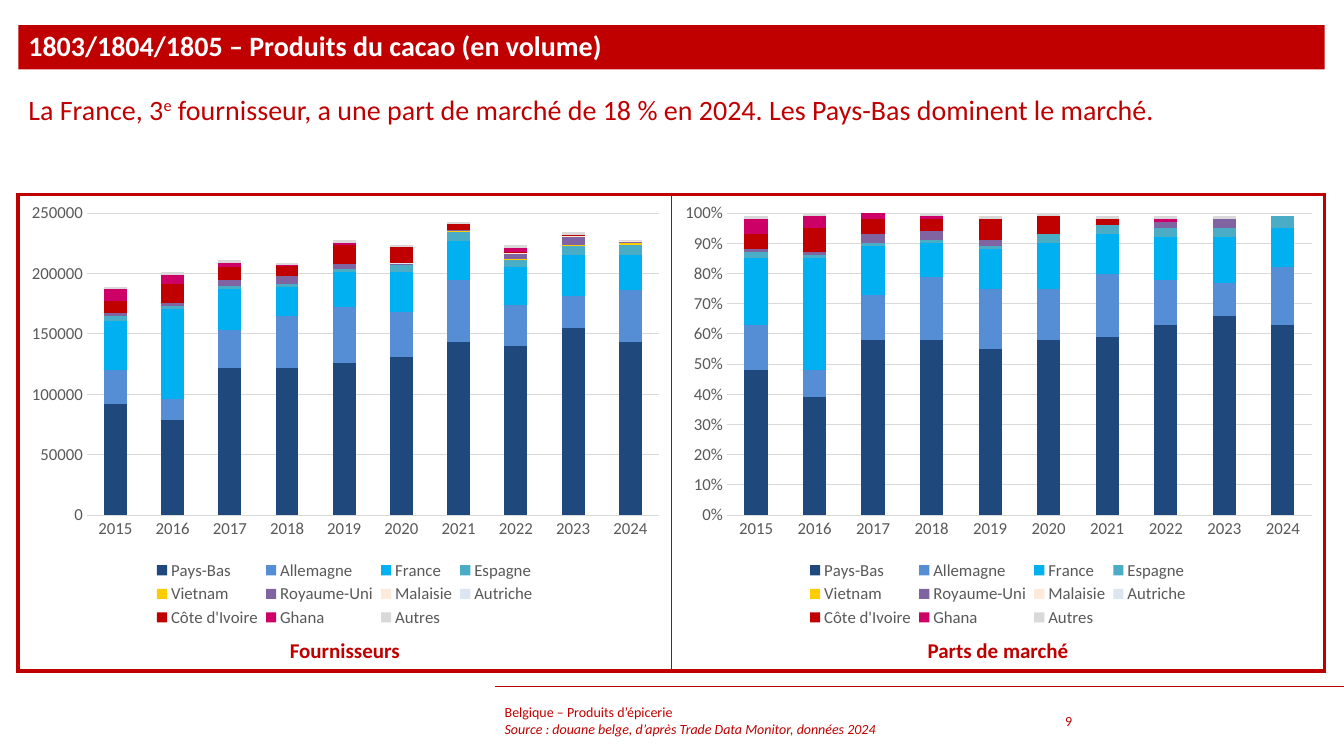
from dataclasses import dataclass

from lxml import etree
from pptx import Presentation
from pptx import util as u
from pptx.chart import data as chart_data
from pptx.dml import color
from pptx.enum import chart as ch, shapes, text
from pptx.oxml import parse_xml
from pptx.oxml.ns import nsdecls, qn


@dataclass(frozen=True)
class Theme:
    red: str = "C00000"
    white: str = "FFFFFF"
    grid: str = "D9D9D9"
    label: str = "595959"
    font: str = "Calibri"
    heading: int = 20
    caption: int = 15
    chart: int = 12
    footer: int = 10


THEME = Theme()
rgb = color.RGBColor.from_string


def add_run(paragraph, words, size, hue=THEME.red, bold=False, italic=False):
    run = paragraph.add_run()
    run.text = words
    font = run.font
    font.name, font.size, font.color.rgb = THEME.font, u.Pt(size), rgb(hue)
    font.bold, font.italic = bold, italic
    return run


def place_manually(part, before, x, y, w, h, inner=False):
    for old in part.findall(qn("c:layout")):
        part.remove(old)
    target = '<c:layoutTarget val="inner"/>' if inner else ""
    layout = parse_xml(
        f'<c:layout {nsdecls("c")}><c:manualLayout>{target}'
        '<c:xMode val="edge"/><c:yMode val="edge"/>'
        f'<c:x val="{x}"/><c:y val="{y}"/><c:w val="{w}"/><c:h val="{h}"/>'
        "</c:manualLayout></c:layout>")
    part.find(qn(before)).addprevious(layout)


deck = Presentation()
deck.slide_width, deck.slide_height = u.Cm(33.87), u.Cm(19.05)
slide = deck.slides.add_slide(deck.slide_layouts[1])

LEFT, TOP, HALF, FRAME_HEIGHT = 0.46, 4.9, 16.46, 12.01

heading = slide.shapes.title
message = slide.placeholders[1]
for holder, top, height, anchor in (
        (heading, 0.63, 1.12, text.MSO_ANCHOR.MIDDLE),
        (message, 2.29, 2.06, text.MSO_ANCHOR.TOP)):
    holder.left, holder.top = u.Cm(LEFT), u.Cm(top)
    holder.width, holder.height = u.Cm(2 * HALF), u.Cm(height)
    frame = holder.text_frame
    frame.word_wrap, frame.auto_size = True, text.MSO_AUTO_SIZE.NONE
    frame.vertical_anchor = anchor
    line = frame.paragraphs[0]
    properties = line._p.get_or_add_pPr()
    properties.set("marL", "0")
    properties.set("indent", "0")
    etree.SubElement(properties, qn("a:buNone"))
    line.alignment, line.line_spacing, line.space_before = text.PP_ALIGN.LEFT, 0.9, u.Pt(0)

heading.fill.solid()
heading.fill.fore_color.rgb = rgb(THEME.red)
add_run(heading.text_frame.paragraphs[0], "1803/1804/1805 – Produits du cacao (en volume)",
        THEME.heading, THEME.white, bold=True)

sentence = message.text_frame.paragraphs[0]
add_run(sentence, "La France, 3", THEME.heading)
ordinal = add_run(sentence, "e", THEME.heading)
ordinal._r.get_or_add_rPr().set("baseline", "30000")
add_run(sentence, " fournisseur, a une part de marché de 18 % en 2024. "
        "Les Pays-Bas dominent le marché.", THEME.heading)

panels = slide.shapes.add_table(1, 2, u.Cm(LEFT), u.Cm(TOP), u.Cm(2 * HALF), u.Cm(FRAME_HEIGHT)).table
panels.first_row = panels.horz_banding = False
for column, edges in enumerate(({"L": 3, "R": 1, "T": 3, "B": 3}, {"L": 1, "R": 3, "T": 3, "B": 3})):
    cell = panels.cell(0, column)
    for side, weight in edges.items():
        cell._tc.get_or_add_tcPr().append(parse_xml(
            f'<a:ln{side} {nsdecls("a")} w="{u.Pt(weight)}"><a:solidFill>'
            f'<a:srgbClr val="{THEME.red}"/></a:solidFill></a:ln{side}>'))
    cell.fill.background()

years = [str(year) for year in range(2015, 2025)]
suppliers = {
    "Pays-Bas": ("1F497D", (92000, 79000, 122000, 122000, 126000, 131000, 143000, 140000, 155000, 143000),
                 (0.48, 0.39, 0.58, 0.58, 0.55, 0.58, 0.59, 0.63, 0.66, 0.63)),
    "Allemagne": ("558ED5", (28000, 17000, 31000, 43000, 46000, 37000, 52000, 34000, 26000, 43000),
                  (0.15, 0.09, 0.15, 0.21, 0.2, 0.17, 0.21, 0.15, 0.11, 0.19)),
    "France": ("00B0F0", (41000, 75000, 34000, 24000, 29000, 33000, 32000, 31000, 34000, 29000),
               (0.22, 0.37, 0.16, 0.11, 0.13, 0.15, 0.13, 0.14, 0.15, 0.13)),
    "Espagne": ("4BACC6", (4000, 2000, 3000, 2000, 3000, 6000, 7000, 6000, 8000, 9000),
                (0.02, 0.01, 0.01, 0.01, 0.01, 0.03, 0.03, 0.03, 0.03, 0.04)),
    "Vietnam": ("FFCC00", (0, 0, 0, 0, 0, 0, 1000, 1000, 1000, 1000), (0,) * 10),
    "Royaume-Uni": ("8064A2", (2000, 3000, 5000, 7000, 4000, 1000, 1000, 4000, 6000, 1000),
                    (0.01, 0.01, 0.03, 0.03, 0.02, 0, 0, 0.02, 0.03, 0)),
    "Malaisie": ("FDEADA", (0, 0, 0, 0, 0, 0, 0, 1000, 1000, 1000), (0,) * 10),
    "Autriche": ("DCE6F2", (0, 0, 0, 0, 0, 1000, 0, 0, 0, 0), (0,) * 10),
    "Côte d'Ivoire": ("C00000", (10000, 15000, 10000, 8000, 16000, 13000, 5000, 1000, 1000, 0),
                      (0.05, 0.08, 0.05, 0.04, 0.07, 0.06, 0.02, 0, 0, 0)),
    "Ghana": ("CC0066", (10000, 8000, 4000, 1000, 1000, 0, 0, 3000, 0, 0),
              (0.05, 0.04, 0.02, 0.01, 0, 0, 0, 0.01, 0, 0)),
    "Autres": ("D9D9D9", (2000, 2000, 2000, 2000, 3000, 2000, 2000, 3000, 2000, 1000),
               (0.01, 0.01, 0.01, 0.01, 0.01, 0.01, 0.01, 0.01, 0.01, 0)),
}

for side, (caption, number_format, top_value, step, plot_x, plot_w) in enumerate((
        ("Fournisseurs", "General", 250000, 50000, 0.105, 0.876),
        ("Parts de marché", "0%", 1, 0.1, 0.085, 0.896))):
    left = u.Cm(LEFT + side * HALF)
    table_data = chart_data.CategoryChartData(number_format=number_format)
    table_data.categories = years
    for supplier, (_, *measures) in suppliers.items():
        table_data.add_series(supplier, measures[side])
    chart = slide.shapes.add_chart(ch.XL_CHART_TYPE.COLUMN_STACKED, left, u.Cm(TOP),
                                   u.Cm(HALF), u.Cm(11), table_data).chart
    chart.has_title = False
    chart.has_legend = True
    chart.legend.position = ch.XL_LEGEND_POSITION.BOTTOM
    chart.legend.include_in_layout = False
    plot = chart.plots[0]
    plot.gap_width, plot.overlap, plot.vary_by_categories = 150, 100, False
    for series, (hue, *_) in zip(plot.series, suppliers.values()):
        series.format.fill.solid()
        series.format.fill.fore_color.rgb = rgb(hue)

    years_axis, amounts = chart.category_axis, chart.value_axis
    for axis in (years_axis, amounts):
        axis.major_tick_mark = axis.minor_tick_mark = ch.XL_TICK_MARK.NONE
    amounts.minimum_scale, amounts.maximum_scale, amounts.major_unit = 0, top_value, step
    amounts.tick_labels.number_format = number_format
    amounts.tick_labels.number_format_is_linked = False
    amounts.format.line.fill.background()
    for stroke in (years_axis.format.line, amounts.major_gridlines.format.line):
        stroke.color.rgb, stroke.width = rgb(THEME.grid), u.Pt(0.75)
    for font in (chart.font, years_axis.tick_labels.font, amounts.tick_labels.font, chart.legend.font):
        font.name, font.size, font.color.rgb = THEME.font, u.Pt(THEME.chart), rgb(THEME.label)

    place_manually(chart._chartSpace.chart.plotArea, "c:barChart", plot_x, 0.043, plot_w, 0.692, inner=True)
    place_manually(chart.legend._element, "c:overlay", 0.2, 0.83, 0.6, 0.17)

    label = slide.shapes.add_textbox(left, u.Cm(15.93), u.Cm(HALF), u.Cm(0.89)).text_frame
    label.word_wrap = True
    label.paragraphs[0].alignment = text.PP_ALIGN.CENTER
    add_run(label.paragraphs[0], caption, THEME.caption, bold=True)

rule = slide.shapes.add_connector(shapes.MSO_CONNECTOR.STRAIGHT, u.Cm(33.87), u.Cm(17.3), u.Cm(12.47), u.Cm(17.3))
rule.line.color.rgb, rule.line.width = rgb(THEME.red), u.Pt(0.5)
etree.SubElement(rule._element.spPr, qn("a:effectLst"))

for left, width, lines in (
        (12.47, 13.79, (("Belgique – Produits d’épicerie", False),
                        ("Source : douane belge, d’après Trade Data Monitor, données 2024", True))),
        (26.59, 2.51, (("9", False),))):
    footer = slide.shapes.add_textbox(u.Cm(left), u.Cm(17.65), u.Cm(width), u.Cm(1.02)).text_frame
    footer.word_wrap, footer.vertical_anchor = True, text.MSO_ANCHOR.MIDDLE
    for row, (words, italic) in enumerate(lines):
        paragraph = footer.add_paragraph() if row else footer.paragraphs[0]
        add_run(paragraph, words, THEME.footer, italic=italic)

deck.save("out.pptx")
